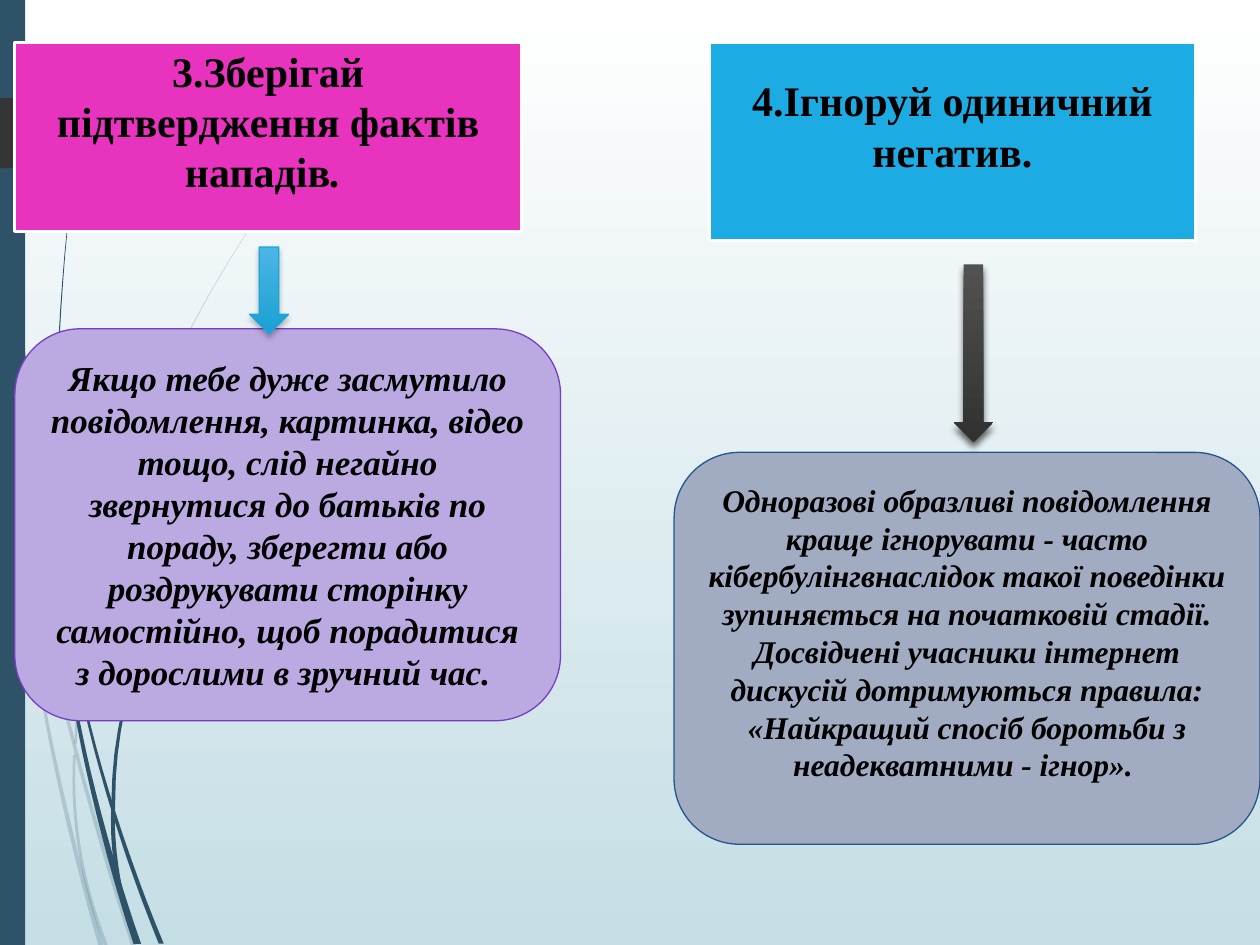
"""Build a slide with two cyberbullying rules, each followed by its explanation."""
from lxml import etree
from pptx import Presentation
from pptx.dml.color import RGBColor
from pptx.enum.shapes import MSO_SHAPE
from pptx.enum.text import MSO_ANCHOR, PP_ALIGN
from pptx.oxml.ns import qn
from pptx.util import Cm, Pt

RECT, ROUND = MSO_SHAPE.RECTANGLE, MSO_SHAPE.ROUNDED_RECTANGLE
TAG, ARROW = MSO_SHAPE.PENTAGON, MSO_SHAPE.DOWN_ARROW
MIDDLE, CENTER = MSO_ANCHOR.MIDDLE, PP_ALIGN.CENTER
FONT = "Times New Roman"

BLACK = RGBColor(0x00, 0x00, 0x00)
WHITE = RGBColor(0xFF, 0xFF, 0xFF)
MIST = RGBColor(0xC5, 0xDE, 0xE5)
NAVY = RGBColor(0x2E, 0x53, 0x69)
CHARCOAL = RGBColor(0x35, 0x35, 0x35)
LILAC = RGBColor(0xBB, 0xA9, 0xE1)
VIOLET = RGBColor(0x78, 0x3D, 0xC3)
PINK = RGBColor(0xE8, 0x33, 0xBF)
BLUE = RGBColor(0x1C, 0xAC, 0xE3)
SLATE = RGBColor(0xA1, 0xAB, 0xC1)
DEEP_BLUE = RGBColor(0x24, 0x55, 0x8B)
SKY_TOP, SKY_END = RGBColor(0x4D, 0xB5, 0xE6), RGBColor(0x1A, 0xA0, 0xD4)
SKY_LINE = RGBColor(0x1B, 0xA4, 0xD9)
GREY_TOP, GREY_END = RGBColor(0x51, 0x51, 0x51), RGBColor(0x31, 0x31, 0x31)

UNIT = Cm(2.54) / 1000
STEPS = 16

# start, bend and end points, then the width at both ends
FAINT_STRANDS = [
    ((100, 3500), (380, 5450), (1060, 7500), 10, 40),
    ((80, 3500), (220, 5500), (800, 7500), 10, 40),
    ((590, 5990), (550, 6750), (840, 7500), 20, 30),
    ((2170, 1530), (660, 3710), (600, 5900), 4, 20),
]
DARK_STRANDS = [
    ((30, 0), (60, 2400), (470, 4810), 10, 10),
    ((470, 4770), (630, 6130), (1090, 7490), 10, 60),
    ((500, 4720), (710, 6100), (1280, 7490), 10, 40),
    ((2160, 3440), (910, 4880), (900, 6350), 5, 30),
    ((900, 6350), (870, 6960), (1090, 7490), 30, 40),
    ((580, 1410), (375, 3060), (490, 4720), 4, 15),
]
CARDS = [
    (ROUND, 0.3, 6.63, 11, 7.9, LILAC, VIOLET, 0.75, 0, 20,
     [("Якщо тебе дуже засмутило повідомлення, картинка, відео тощо, слід негайно звернутися "
       "до батьків по пораду, зберегти або роздрукувати сторінку самостійно, щоб порадитися "
       "з дорослими в зручний час. ", True)]),
    (RECT, 0.3, 0.86, 10.21, 3.81, PINK, WHITE, 1.75, 0.66, 24,
     [("3.Зберігай підтвердження фактів нападів", False), (". ", True)]),
    (RECT, 14.3, 0.86, 9.8, 3.99, BLUE, WHITE, 1.75, 0.66, 24,
     [("4.Ігноруй одиничний негатив.", False)]),
    (ROUND, 13.59, 9.12, 11.81, 7.9, SLATE, DEEP_BLUE, 0.75, 0.66, 18,
     [("Одноразові образливі повідомлення краще ігнорувати - часто кібербулінгвнаслідок такої "
       "поведінки зупиняється на початковій стадії. Досвідчені учасники інтернет дискусій "
       "дотримуються правила: «Найкращий спосіб боротьби з неадекватними - ігнор». ", True)]),
]
ARROWS = [
    (5.03, 4.98, 1.75, SKY_TOP, SKY_END, SKY_LINE, 25, 3, 2),
    (19.23, 5.33, 3.58, GREY_TOP, GREY_END, None, 60, 4, 3),
]


def set_gradient(fill, *colors):
    fill.gradient()
    fill.gradient_angle = 270
    for stop, color in zip(fill.gradient_stops, colors):
        stop.color.rgb = color


def add_shape(kind, x, y, w, h, color=None):
    sp = s.shapes.add_shape(kind, Cm(x), Cm(y), Cm(w), Cm(h))
    sp.shadow.inherit = False
    sp.line.fill.background()
    if color is not None:
        sp.fill.solid()
        sp.fill.fore_color.rgb = color
    return sp


prs = Presentation()
prs.slide_width, prs.slide_height = Cm(25.4), Cm(19.05)
s = prs.slides.add_slide(prs.slide_layouts[6])
set_gradient(s.background.fill, WHITE, MIST)

for strands, opacity in ((FAINT_STRANDS, 20), (DARK_STRANDS, 100)):
    group = s.shapes.add_group_shape()
    for (x0, y0), (x1, y1), (x2, y2), w0, w1 in strands:
        left, right = [], []
        for t in (n / STEPS for n in range(STEPS + 1)):
            a, b, c = (1 - t) ** 2, 2 * t * (1 - t), t * t
            x, y = a * x0 + b * x1 + c * x2, a * y0 + b * y1 + c * y2
            half = (w0 + (w1 - w0) * t) / 2
            left.append((x - half, y))
            right.append((x + half, y))
        outline = left + right[::-1]
        builder = group.shapes.build_freeform(*outline[0], scale=UNIT)
        builder.add_line_segments(outline[1:], close=True)
        sp = builder.convert_to_shape()
        sp.shadow.inherit = False
        sp.line.fill.background()
        sp.fill.solid()
        sp.fill.fore_color.rgb = NAVY
        if opacity < 100:
            clr = sp._element.spPr.find(qn("a:solidFill"))[0]
            etree.SubElement(clr, qn("a:alpha"), val=str(opacity * 1000))

add_shape(RECT, 0, 0, 0.51, 19.05, NAVY)
add_shape(TAG, 0, 1.98, 3.78, 1.41, CHARCOAL)

for kind, x, y, w, h, color, edge, weight, bottom, size, runs in CARDS:
    sp = add_shape(kind, x, y, w, h, color)
    sp.line.color.rgb = edge
    sp.line.width = Pt(weight)
    tf = sp.text_frame
    tf.word_wrap = True
    tf.vertical_anchor = MIDDLE
    tf.margin_top, tf.margin_bottom = 0, Cm(bottom)
    p = tf.paragraphs[0]
    p.alignment = CENTER
    for text, italic in runs:
        r = p.add_run()
        r.text = text
        r.font.name, r.font.size = FONT, Pt(size)
        r.font.bold, r.font.italic = True, italic
        r.font.color.rgb = BLACK

for x, y, h, top, end, edge, opacity, blur, dist in ARROWS:
    sp = add_shape(ARROW, x, y, 0.79, h)
    set_gradient(sp.fill, top, end)
    if edge is not None:
        sp.line.color.rgb = edge
        sp.line.width = Pt(0.75)
    effects = sp._element.spPr.find(qn("a:effectLst"))
    shadow = etree.SubElement(effects, qn("a:outerShdw"), blurRad=str(Pt(blur)),
                              dist=str(Pt(dist)), dir="5400000", rotWithShape="0")
    clr = etree.SubElement(shadow, qn("a:srgbClr"), val=str(BLACK))
    etree.SubElement(clr, qn("a:alpha"), val=str(opacity * 1000))

prs.save("out.pptx")
